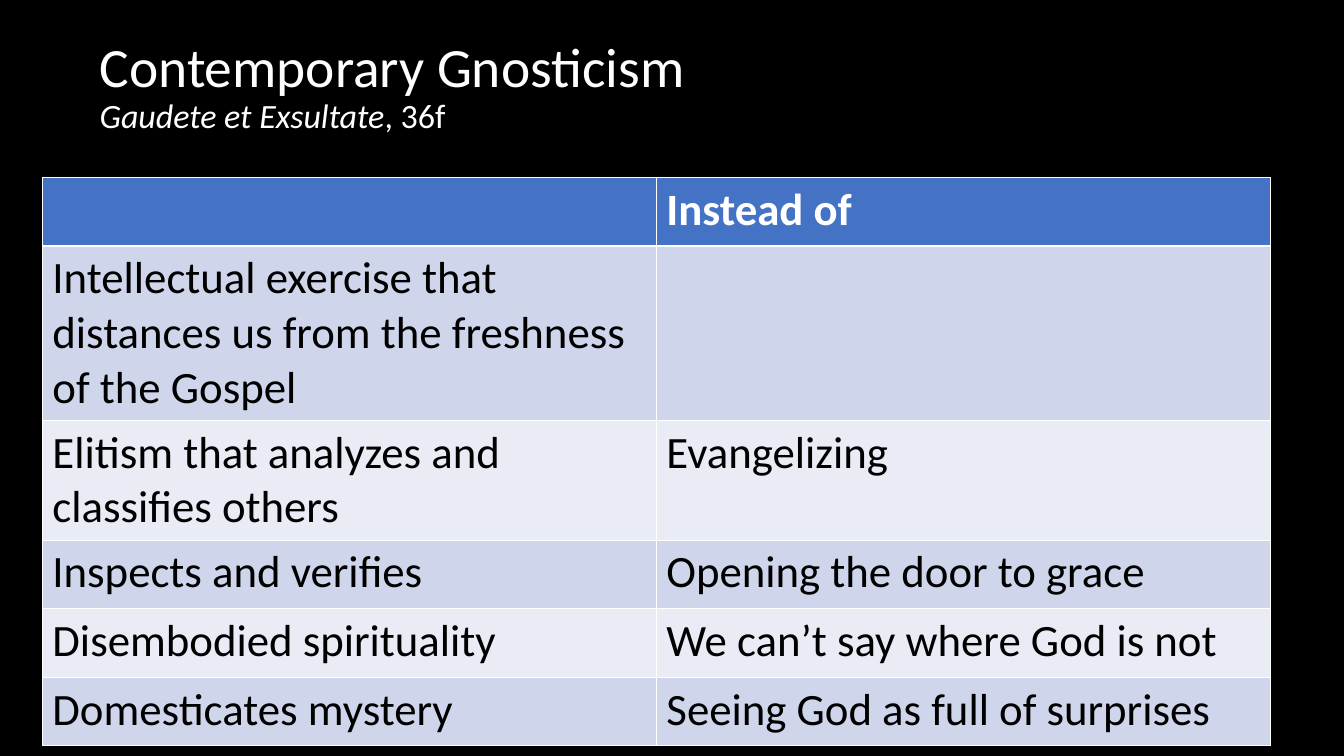
import pptx
import pptx.util
import pptx.dml.color
import pptx.enum.text

Inches, Pt = pptx.util.Inches, pptx.util.Pt

TITLE = [
    ("Contemporary Gnosticism", {"size": Pt(39.6)}),
    None,
    ("Gaudete et Exsultate", {"size": Pt(24.3), "italic": True}),
    (", 36f", {"size": Pt(24.3), "italic": False}),
]
ROWS = [
    (0.68, "", "Instead of"),
    (1.73, "Intellectual exercise that distances us from the freshness of the Gospel", ""),
    (1.19, "Elitism that analyzes and classifies others", "Evangelizing"),
    (0.68, "Inspects and verifies", "Opening the door to grace"),
    (0.68, "Disembodied spirituality", "We can’t say where God is not"),
    (0.68, "Domesticates mystery", "Seeing God as full of surprises"),
]
COL_WIDTH = 6.09
HEADER, BANDS = "4472C4", ("E9EBF5", "CFD5EA")


def color(hex_value):
    return pptx.dml.color.RGBColor.from_string(hex_value)


def fill(target, hex_value):
    target.fill.solid()
    target.fill.fore_color.rgb = color(hex_value)


def style(font, hex_value, formats):
    font.name = "Calibri"
    font.color.rgb = color(hex_value)
    for name, value in formats.items():
        setattr(font, name, value)


def add_title(s):
    tf = s.shapes.add_textbox(Inches(0.89), Inches(0.33), Inches(11.5), Inches(1.45)).text_frame
    formats = {
        "word_wrap": True,
        "vertical_anchor": pptx.enum.text.MSO_ANCHOR.TOP,
        "margin_top": Inches(0.06),
    }
    for name, value in formats.items():
        setattr(tf, name, value)
    p = tf.paragraphs[0]
    p.line_spacing = 0.9
    for part in TITLE:
        if part is None:
            p.add_line_break()
            continue
        r = p.add_run()
        r.text = part[0]
        style(r.font, "FFFFFF", part[1])


def add_comparison(s):
    height = sum(row[0] for row in ROWS)
    table = s.shapes.add_table(
        len(ROWS), 2, Inches(0.42), Inches(1.76), Inches(2 * COL_WIDTH), Inches(height)
    ).table
    for i, (row_height, *texts) in enumerate(ROWS):
        table.rows[i].height = Inches(row_height)
        for j, text in enumerate(texts):
            cell = table.cell(i, j)
            fill(cell, BANDS[i % 2] if i else HEADER)
            p = cell.text_frame.paragraphs[0]
            p.text = text
            style(p.font, "000000" if i else "FFFFFF", {"size": Pt(32), "bold": i == 0})
            for r in p.runs:
                style(r.font, "000000" if i else "FFFFFF", {"size": Pt(32), "bold": i == 0})


def main():
    prs = pptx.Presentation()
    prs.slide_width, prs.slide_height = Inches(13.33), Inches(7.5)
    s = prs.slides.add_slide(prs.slide_layouts[6])
    fill(s.background, "000000")
    add_title(s)
    add_comparison(s)
    prs.save("out.pptx")


if __name__ == "__main__":
    main()
